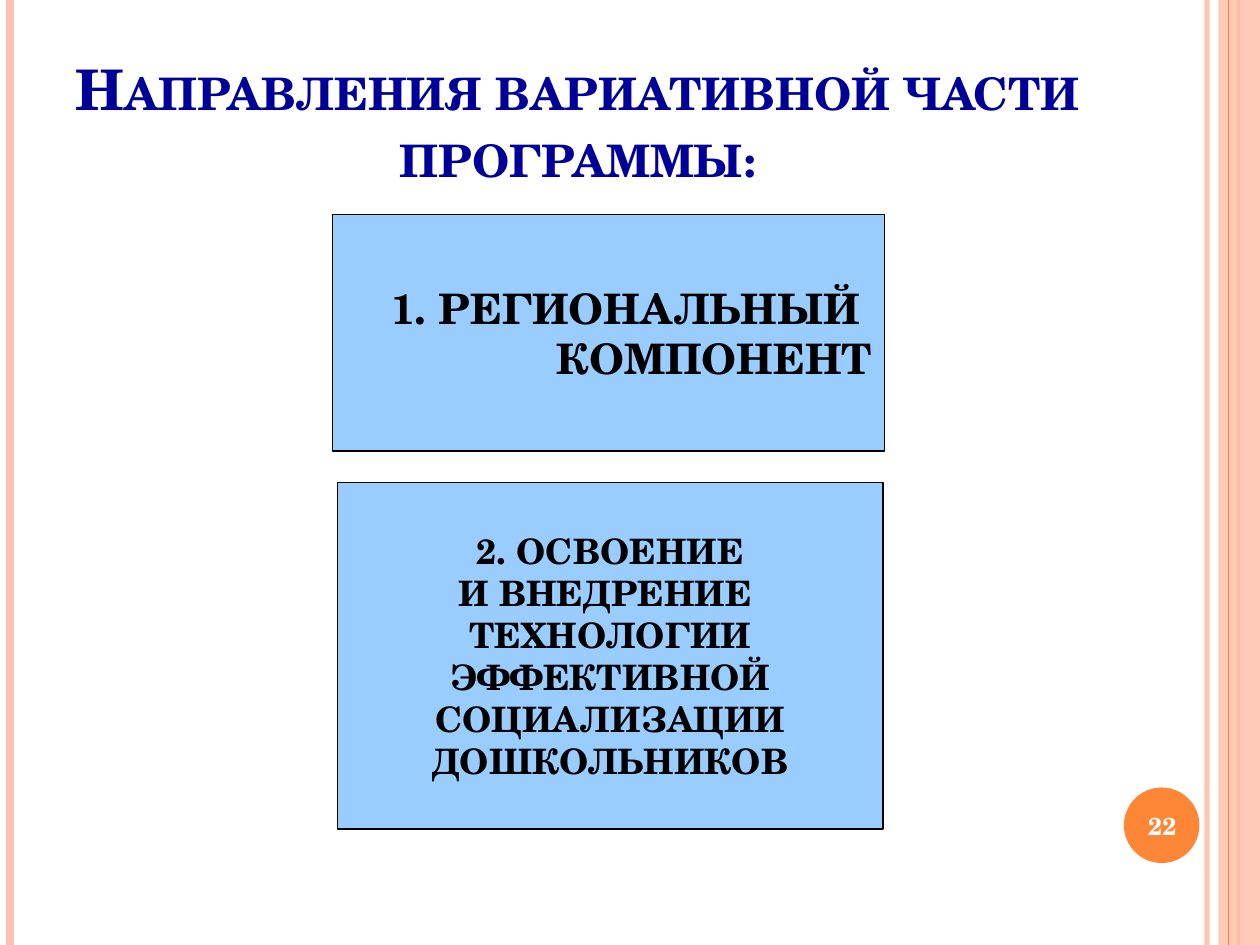
import pptx
import pptx.dml.color
import pptx.enum.shapes
import pptx.enum.text
import pptx.oxml
import pptx.oxml.ns
import pptx.util
from pptx.util import Inches

FONT = "TeX Gyre Schola"
COLORS = {
    "peach": "FEC3AE",
    "orange": "FE8637",
    "sky": "99CCFF",
    "navy": "000099",
    "black": "000000",
    "white": "FFFFFF",
}
SHAPES = pptx.enum.shapes.MSO_SHAPE
ALIGN = pptx.enum.text.PP_ALIGN
ANCHOR = pptx.enum.text.MSO_ANCHOR


def rgb(name):
    return pptx.dml.color.RGBColor.from_string(COLORS[name])


def set_opacity(element, percent):
    """Make the solid colour inside a fill or line partly transparent."""
    color = next(element.iter(pptx.oxml.ns.qn("a:srgbClr")))
    alpha = color.makeelement(pptx.oxml.ns.qn("a:alpha"), {"val": str(percent * 1000)})
    color.append(alpha)


def add_stripe(slide, x, color, width, opacity=100):
    """Draw a vertical line over the full slide height."""
    stripe = slide.shapes.add_connector(
        pptx.enum.shapes.MSO_CONNECTOR.STRAIGHT,
        Inches(x), Inches(0), Inches(x), Inches(7.5))
    stripe.line.color.rgb = rgb(color)
    stripe.line.width = pptx.util.Pt(width)
    properties = stripe._element.spPr
    if opacity < 100:
        set_opacity(properties, opacity)
    properties.append(properties.makeelement(pptx.oxml.ns.qn("a:effectLst"), {}))


def add_filled_shape(slide, kind, bounds, color, opacity=100, outline=None):
    shape = slide.shapes.add_shape(kind, *map(Inches, bounds))
    shape.shadow.inherit = False
    shape.fill.solid()
    shape.fill.fore_color.rgb = rgb(color)
    if opacity < 100:
        set_opacity(shape._element.spPr, opacity)
    if outline:
        shape.line.color.rgb = rgb(outline)
        shape.line.width = pptx.util.Pt(0.75)
    else:
        shape.line.fill.background()
    return shape


def write_text(shape, lines, size, color, align=ALIGN.CENTER,
               anchor=ANCHOR.MIDDLE, wrap=True, small_caps=False):
    frame = shape.text_frame
    frame.word_wrap = wrap
    frame.vertical_anchor = anchor
    for index, line in enumerate(lines):
        para = frame.add_paragraph() if index else frame.paragraphs[0]
        para.alignment = align
        span = para.add_run()
        span.text = line
        span.font.name = FONT
        span.font.size = pptx.util.Pt(size)
        span.font.bold = True
        span.font.color.rgb = rgb(color)
        if small_caps:
            span.font._element.set("cap", "small")


def add_text_box(slide, bounds, lines, size, color, **options):
    box = slide.shapes.add_textbox(*map(Inches, bounds))
    write_text(box, lines, size, color, **options)


def add_direction(slide, bounds, lines, size, align=ALIGN.CENTER):
    """Add a blue panel naming one direction of the programme."""
    panel = add_filled_shape(slide, SHAPES.RECTANGLE, bounds, "sky", outline="black")
    write_text(panel, lines, size, "black", align=align, wrap=False)


def add_frame(slide):
    """Add the stripes at the edges and the disc for the page number."""
    add_stripe(slide, 9.58, "peach", 3, opacity=93)
    add_stripe(slide, 0.08, "peach", 4.5)
    add_stripe(slide, 9.83, "orange", 1.5)
    add_filled_shape(slide, SHAPES.RECTANGLE, (9.67, 0, 0.33, 7.5), "peach", opacity=87)
    add_stripe(slide, 9.75, "orange", 0.75)
    add_filled_shape(slide, SHAPES.OVAL, (8.92, 6.25, 0.6, 0.6), "orange")


def main():
    deck = pptx.Presentation()
    deck.slide_width, deck.slide_height = Inches(10), Inches(7.5)
    slide = deck.slides.add_slide(deck.slide_layouts[6])

    add_frame(slide)
    add_text_box(slide, (0.5, 0.3, 8.17, 1.25),
                 ["Направления вариативной части программы:"], 32, "navy",
                 anchor=ANCHOR.BOTTOM, small_caps=True)
    add_direction(slide, (2.64, 1.7, 4.38, 1.88),
                  ["1. РЕГИОНАЛЬНЫЙ ", "КОМПОНЕНТ"], 24, align=ALIGN.RIGHT)
    add_direction(slide, (2.68, 3.83, 4.33, 2.75),
                  ["2. ОСВОЕНИЕ", "И ВНЕДРЕНИЕ ", "ТЕХНОЛОГИИ", "ЭФФЕКТИВНОЙ",
                   " СОЦИАЛИЗАЦИИ ", "ДОШКОЛЬНИКОВ"], 20)
    add_text_box(slide, (8.89, 6.27, 0.67, 0.57), ["22"], 14, "white")

    deck.save("out.pptx")


if __name__ == "__main__":
    main()
